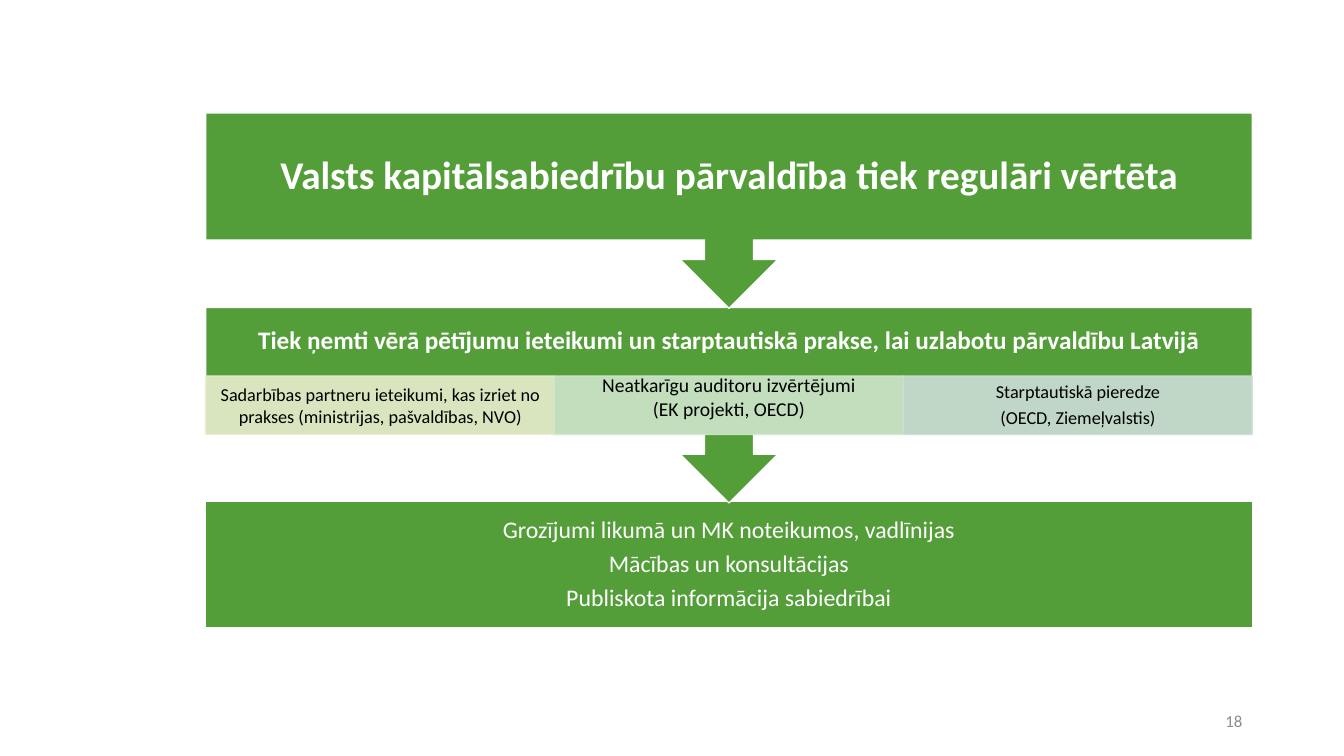
from dataclasses import dataclass

from lxml import etree
from pptx import Presentation
from pptx import util as u
from pptx.dml.color import RGBColor
from pptx.enum import shapes, text
from pptx.oxml.ns import qn


@dataclass(frozen=True)
class Theme:
    font: str = "Calibri"
    green: str = "549E39"
    white: str = "FFFFFF"
    black: str = "000000"
    grey: str = "8C8C8C"
    title_size: float = 28
    heading_size: float = 18
    result_size: float = 17
    source_size: float = 13
    source_large_size: float = 14
    number_size: float = 12


@dataclass(frozen=True)
class Area:
    left: float
    top: float
    width: float
    height: float


@dataclass(frozen=True)
class Callout:
    wording: str
    top: float
    text_height: float
    size: float
    inset: float


@dataclass(frozen=True)
class Source:
    lines: tuple[str, ...]
    fill: str
    size: float
    line_spacing: float = 1.0
    gap: float = 0.0
    bottom_inset: float = 0.02


THEME = Theme()
LEFT, WIDTH = 2.04, 10.38
CALLOUT_HEIGHT = 1.94
SOURCE_TOP, SOURCE_HEIGHT = 3.73, 0.58
TIGHT, GAP = 0.9, 0.35  # line spacing, and space after as a share of the type size

CALLOUTS = (
    Callout("Tiek ņemti vērā pētījumu ieteikumi un starptautiskā prakse, "
            "lai uzlabotu pārvaldību Latvijā", 3.05, 0.68, THEME.heading_size, 0.14),
    Callout("Valsts kapitālsabiedrību pārvaldība tiek regulāri vērtēta",
            1.12, 1.26, THEME.title_size, 0.22),
)
SOURCES = (
    Source(("Sadarbības partneru ieteikumi, kas izriet no prakses "
            "(ministrijas, pašvaldības, NVO)",), "E8EDCE", THEME.source_size),
    Source(("Neatkarīgu auditoru izvērtējumi", "(EK projekti, OECD)"),
           "CFE6CC", THEME.source_large_size, bottom_inset=0.19),
    Source(("Starptautiskā pieredze", "(OECD, Ziemeļvalstis)"),
           "CCDDD6", THEME.source_size, TIGHT, GAP),
)
RESULTS = ("Grozījumi likumā un MK noteikumos, vadlīnijas",
           "Mācības un konsultācijas", "Publiskota informācija sabiedrībai")


def place(area: Area) -> tuple:
    return tuple(u.Inches(v) for v in (area.left, area.top, area.width, area.height))


def write(box, lines: tuple[str, ...], *, size: float, color: str = THEME.white,
          bold: bool = False, align=text.PP_ALIGN.CENTER, line_spacing: float = TIGHT,
          gap: float = GAP, insets: tuple[float, float, float] = (0.1, 0.05, 0.05)) -> None:
    """Fill a shape with paragraphs; insets are side, top and bottom."""
    frame = box.text_frame
    frame.word_wrap = True
    frame.vertical_anchor = text.MSO_ANCHOR.MIDDLE
    side, top, bottom = insets
    frame.margin_left = frame.margin_right = u.Inches(side)
    frame.margin_top, frame.margin_bottom = u.Inches(top), u.Inches(bottom)
    for index, line in enumerate(lines):
        para = frame.add_paragraph() if index else frame.paragraphs[0]
        para.alignment = align
        para.line_spacing = line_spacing
        para.space_after = u.Pt(size * gap)
        span = para.add_run()
        span.text = line
        span.font.name = THEME.font
        span.font.size = u.Pt(size)
        span.font.bold = bold
        span.font.color.rgb = RGBColor.from_string(color)


def add_block(page, kind, area: Area, fill: str, line: str, opacity: int = 100):
    box = page.shapes.add_shape(kind, *place(area))
    box.shadow.inherit = False
    box.fill.solid()
    box.fill.fore_color.rgb = RGBColor.from_string(fill)
    box.line.color.rgb = RGBColor.from_string(line)
    box.line.width = u.Pt(1)
    if opacity < 100:
        for color in box._element.spPr.iter(qn("a:srgbClr")):
            etree.SubElement(color, qn("a:alpha"), val=str(opacity * 1000))
    return box


def add_callout(page, callout: Callout) -> None:
    # The text has its own box, as the block is turned upside down
    block = add_block(page, shapes.MSO_SHAPE.UP_ARROW_CALLOUT,
                      Area(LEFT, callout.top, WIDTH, CALLOUT_HEIGHT), THEME.green, THEME.white)
    block.rotation = 180
    box = page.shapes.add_textbox(*place(Area(LEFT, callout.top, WIDTH, callout.text_height)))
    write(box, (callout.wording,), size=callout.size, bold=True, insets=(callout.inset,) * 3)


def add_source(page, column: int, source: Source) -> None:
    width = WIDTH / len(SOURCES)
    box = add_block(page, shapes.MSO_SHAPE.RECTANGLE,
                    Area(LEFT + column * width, SOURCE_TOP, width, SOURCE_HEIGHT),
                    source.fill, source.fill, opacity=90)
    write(box, source.lines, size=source.size, color=THEME.black,
          line_spacing=source.line_spacing, gap=source.gap,
          insets=(0.1, 0.02, source.bottom_inset))


def main() -> None:
    deck = Presentation()
    deck.slide_width, deck.slide_height = u.Inches(13.33), u.Inches(7.5)
    page = deck.slides.add_slide(deck.slide_layouts[6])

    # Results at the bottom of the flow
    results = add_block(page, shapes.MSO_SHAPE.RECTANGLE, Area(LEFT, 4.97, WIDTH, 1.26),
                        THEME.green, THEME.white)
    write(results, RESULTS, size=THEME.result_size, insets=(0.13, 0.13, 0.13))

    # Recommendations with their three sources, then the opening statement
    recommendations, statement = CALLOUTS
    add_callout(page, recommendations)
    for column, source in enumerate(SOURCES):
        add_source(page, column, source)
    add_callout(page, statement)

    # Page number
    number = page.shapes.add_textbox(*place(Area(9.42, 6.95, 3, 0.4)))
    write(number, ("18",), size=THEME.number_size, color=THEME.grey,
          align=text.PP_ALIGN.RIGHT, line_spacing=1.0, gap=0)

    deck.save("out.pptx")


if __name__ == "__main__":
    main()
